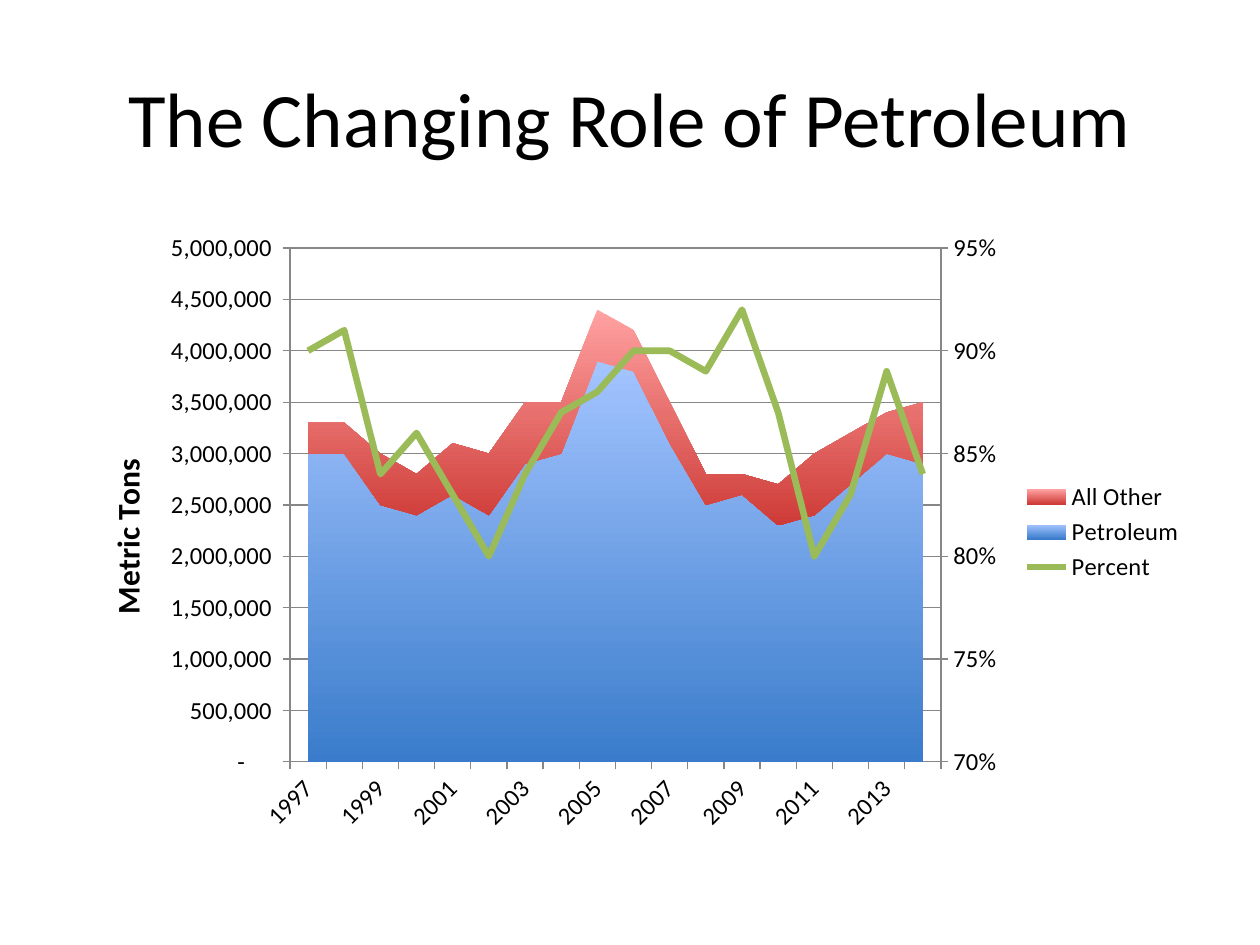
from dataclasses import dataclass

from pptx import Presentation, util as u
from pptx.chart.axis import ValueAxis
from pptx.chart.data import CategoryChartData
from pptx.dml.color import RGBColor
from pptx.enum import chart as ch, text
from pptx.oxml import parse_xml
from pptx.oxml.ns import nsdecls

SCALE = 914400 / 126
CHART = (63, 220, 1134, 624)


@dataclass(frozen=True)
class Theme:
    font: str = "Calibri"
    ink: str = "000000"
    rule: str = "878787"
    blue: tuple = ("A3C4FF", "3A7CCB")
    red: tuple = ("FFA2A1", "CE3B37")
    green: str = "9BBB59"
    head: int = 44
    label: int = 18
    tick: int = 14


LOOK = Theme()

YEARS = [str(year) for year in range(1997, 2015)]
# Hundreds of thousands of metric tons
OIL = [30, 30, 25, 24, 26, 24, 29, 30, 39, 38, 31, 25, 26, 23, 24, 27, 30, 29]
OTHER = [3, 3, 5, 4, 5, 6, 6, 5, 5, 4, 4, 3, 2, 4, 6, 5, 4, 6]
# Petroleum as a percentage of the total
SHARE = [90, 91, 84, 86, 83, 80, 84, 87, 88,
         90, 90, 89, 92, 87, 80, 83, 89, 84]
TONS = r'_(* #,##0_);_(* \(#,##0\);_(* "-"??_);_(@_)'

LINE_XML = f"""<c:lineChart {nsdecls('c')}>
  <c:grouping val="standard"/><c:varyColors val="0"/>
  <c:marker val="1"/><c:axId val="501"/><c:axId val="502"/>
</c:lineChart>"""
CAT_XML = f"""<c:catAx {nsdecls('c')}>
  <c:axId val="501"/><c:scaling><c:orientation val="minMax"/></c:scaling>
  <c:delete val="1"/><c:axPos val="b"/><c:crossAx val="502"/>
  <c:crosses val="autoZero"/>
</c:catAx>"""
VAL_XML = f"""<c:valAx {nsdecls('c')}>
  <c:axId val="502"/><c:scaling><c:orientation val="minMax"/></c:scaling>
  <c:delete val="0"/><c:axPos val="r"/><c:tickLblPos val="nextTo"/>
  <c:crossAx val="501"/><c:crosses val="max"/>
  <c:crossBetween val="between"/>
</c:valAx>"""


def px(n):
    return u.Emu(round(n * SCALE))


def box(*sides):
    return [px(n) for n in sides]


def rgb(code):
    return RGBColor.from_string(code)


def set_font(font, size, bold=False):
    font.name, font.size, font.bold = LOOK.font, u.Pt(size), bold
    font.color.rgb = rgb(LOOK.ink)


def add_title(slide, words):
    frame = slide.shapes.add_textbox(*box(63, 38, 1134, 157)).text_frame
    frame.word_wrap = True
    frame.vertical_anchor = text.MSO_ANCHOR.MIDDLE
    para = frame.paragraphs[0]
    para.text = words
    para.alignment = text.PP_ALIGN.CENTER
    set_font(para.runs[0].font, LOOK.head)


def place(node, index, x, y, *size):
    """Fix a chart part at a slide position in px, with or without a size."""
    for old in node.xpath("c:layout"):
        node.remove(old)
    left, top, wide, high = CHART
    parts = [(x - left) / wide, (y - top) / high]
    parts += [n / full for n, full in zip(size, (wide, high))]
    inner = '<c:layoutTarget val="inner"/>' if size else ""
    modes = "".join(f'<c:{k}Mode val="edge"/>' for k in "xy")
    sizes = "".join(f'<c:{k} val="{v:.4f}"/>' for k, v in zip("xywh", parts))
    node.insert(index, parse_xml(
        f'<c:layout {nsdecls("c")}><c:manualLayout>{inner}{modes}{sizes}'
        '</c:manualLayout></c:layout>'))


def style_axis(axis):
    set_font(axis.tick_labels.font, LOOK.tick)
    axis.major_tick_mark = ch.XL_TICK_MARK.OUTSIDE
    axis.minor_tick_mark = ch.XL_TICK_MARK.NONE
    axis.format.line.color.rgb = rgb(LOOK.rule)
    axis.format.line.width = u.Pt(0.75)


def scale_axis(axis, low, high, step, code):
    style_axis(axis)
    axis.minimum_scale, axis.maximum_scale = low, high
    axis.major_unit = step
    axis.tick_labels.number_format = code
    axis.tick_labels.number_format_is_linked = False


def shade(series, stops):
    fill = series.format.fill
    fill.gradient()
    fill.gradient_angle = 270
    for stop, code in zip(fill.gradient_stops, stops):
        stop.color.rgb = rgb(code)


def move_to_line(chart, left):
    """Move the last series to a line plot and return its right axis."""
    area = chart.plots[0]._element
    line, cat, val = map(parse_xml, (LINE_XML, CAT_XML, VAL_XML))
    area.addnext(line)
    line.insert(2, area.xpath("c:ser")[-1])
    left._element.addnext(val)
    val.addnext(cat)
    return ValueAxis(val)


def style_years(axis):
    style_axis(axis)
    node = axis._element
    node.xpath("c:txPr/a:bodyPr")[0].set("rot", "-2700000")
    node.xpath("c:noMultiLvlLbl")[0].addprevious(
        parse_xml(f'<c:tickLblSkip {nsdecls("c")} val="2"/>'))


def style_tons(axis):
    scale_axis(axis, 0, 5000000, 500000, TONS)
    axis.has_major_gridlines = True
    grid = axis.major_gridlines.format.line
    grid.color.rgb, grid.width = rgb(LOOK.rule), u.Pt(0.75)
    axis._element.xpath("c:crossBetween")[0].set("val", "between")
    title = axis.axis_title
    para = title.text_frame.paragraphs[0]
    para.text = "Metric Tons"
    set_font(para.runs[0].font, LOOK.label, True)
    node = title._element
    frame = node.xpath("c:tx/c:rich/a:bodyPr")[0]
    frame.set("rot", "-5400000")
    frame.set("vert", "horz")
    place(node, 1, 100, 453)


def add_chart(slide):
    data = CategoryChartData()
    data.categories = YEARS
    data.add_series("Petroleum", [n * 100000 for n in OIL], TONS)
    data.add_series("All Other", [n * 100000 for n in OTHER], TONS)
    data.add_series("Percent", [n / 100 for n in SHARE], "0%")
    chart = slide.shapes.add_chart(
        ch.XL_CHART_TYPE.AREA_STACKED, *box(*CHART), data).chart
    set_font(chart.font, LOOK.label)
    chart.has_title = False
    chart.has_legend = True
    chart.legend.position = ch.XL_LEGEND_POSITION.RIGHT
    chart.legend.include_in_layout = False
    set_font(chart.legend.font, LOOK.tick)

    left = chart.value_axis
    right = move_to_line(chart, left)
    style_years(chart.category_axis)
    style_tons(left)
    scale_axis(right, 0.7, 0.95, 0.05, "0%")
    area, line = chart.plots
    area.vary_by_categories = False
    for series, stops in zip(area.series, (LOOK.blue, LOOK.red)):
        shade(series, stops)
    share = line.series[0]
    share.smooth = False
    share.marker.style = ch.XL_MARKER_STYLE.NONE
    share.format.line.color.rgb = rgb(LOOK.green)
    share.format.line.width = u.Pt(3.75)
    place(area._element.getparent(), 0, 290, 248, 651, 514)


def main():
    deck = Presentation()
    deck.slide_width, deck.slide_height = box(1260, 945)
    slide = deck.slides.add_slide(deck.slide_layouts[6])
    add_title(slide, "The Changing Role of Petroleum")
    add_chart(slide)
    deck.save("out.pptx")


if __name__ == "__main__":
    main()
